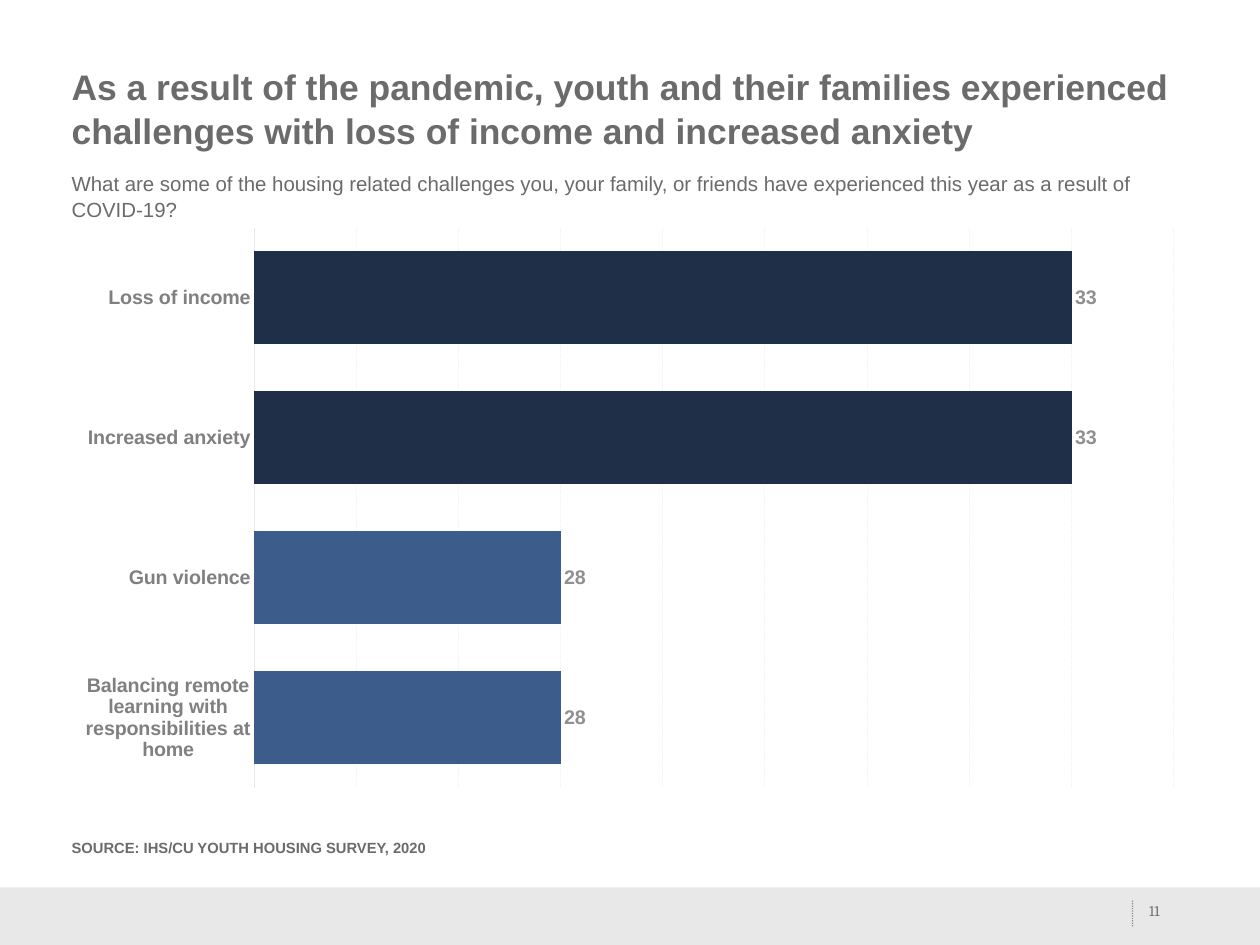
from dataclasses import dataclass

from lxml import etree
from pptx import Presentation
from pptx import util as u
from pptx.chart import data as chart_data
from pptx.dml.color import RGBColor
from pptx.enum import chart as charts, dml, shapes, text
from pptx.oxml import ns

GREY = "6B6B6B"


@dataclass
class TextBlock:
    wording: str
    left: float
    top: float
    width: float
    height: float
    size: float
    font: str = "Arial"
    bold: bool = False
    side_inset: float = 0.1
    top_inset: float = 0.05
    bottom_inset: float = 0.05
    spacing: float = 1.0
    align: text.PP_ALIGN = text.PP_ALIGN.LEFT
    anchor: text.MSO_ANCHOR = text.MSO_ANCHOR.TOP


TEXT_BLOCKS = [
    TextBlock("As a result of the pandemic, youth and their families experienced "
              "challenges with loss of income and increased anxiety",
              0.71, 0.65, 12.8, 0.74, 28.8, bold=True, top_inset=0.07, spacing=1.03),
    TextBlock("What are some of the housing related challenges you, your family, "
              "or friends have experienced this year as a result of COVID-19?",
              0.71, 1.87, 12.8, 0.58, 16.6, spacing=1.06),
    TextBlock("SOURCE: IHS/CU YOUTH HOUSING SURVEY, 2020",
              0.71, 9.42, 13.51, 0.6, 12, bold=True),
    TextBlock("11", 12.85, 9.81, 0.36, 0.57, 12, font="Cambria", side_inset=0,
              top_inset=0, bottom_inset=0, spacing=1.5,
              align=text.PP_ALIGN.CENTER, anchor=text.MSO_ANCHOR.BOTTOM),
]

CHALLENGES = {
    "Loss of income": 33,
    "Increased anxiety": 33,
    "Gun violence": 28,
    "Balancing remote\nlearning with\nresponsibilities at home": 28,
}
TOP_VALUE = max(CHALLENGES.values())


def rgb(value: str) -> RGBColor:
    return RGBColor.from_string(value)


def style_font(font, size: float, color: str, bold: bool = False, name: str = "Arial") -> None:
    font.size = u.Pt(size)
    font.bold = bold
    font.name = name
    font.color.rgb = rgb(color)


def style_line(line, color: str, width: float) -> None:
    line.color.rgb = rgb(color)
    line.width = u.Pt(width)


def add_text(slide, block: TextBlock) -> None:
    frame = slide.shapes.add_textbox(
        u.Inches(block.left), u.Inches(block.top),
        u.Inches(block.width), u.Inches(block.height)).text_frame
    frame.word_wrap = True
    frame.vertical_anchor = block.anchor
    frame.margin_left = frame.margin_right = u.Inches(block.side_inset)
    frame.margin_top = u.Inches(block.top_inset)
    frame.margin_bottom = u.Inches(block.bottom_inset)
    frame.text = block.wording
    paragraph = frame.paragraphs[0]
    paragraph.alignment = block.align
    paragraph.line_spacing = block.spacing
    style_font(paragraph.runs[0].font, block.size, GREY, block.bold, block.font)


def add_footer(slide) -> None:
    band = slide.shapes.add_shape(
        shapes.MSO_SHAPE.RECTANGLE, 0, u.Inches(10.02), u.Inches(14.22), u.Inches(0.65))
    band.shadow.inherit = False
    band.fill.solid()
    band.fill.fore_color.rgb = rgb("E8E8E8")
    band.line.fill.background()

    divider = slide.shapes.add_connector(
        shapes.MSO_CONNECTOR.STRAIGHT, u.Inches(12.78), u.Inches(10.17),
        u.Inches(12.78), u.Inches(10.46))
    style_line(divider.line, GREY, 1)
    divider.line.dash_style = dml.MSO_LINE.ROUND_DOT
    properties = divider._element.spPr
    color = properties.find(".//" + ns.qn("a:srgbClr"))
    etree.SubElement(color, ns.qn("a:alpha"), val="75000")
    etree.SubElement(properties, ns.qn("a:effectLst"))


def fix_plot_area(chart, **fractions: float) -> None:
    plot_area = chart._chartSpace.chart.plotArea
    layout = plot_area.find(ns.qn("c:layout"))
    if layout is None:
        layout = etree.Element(ns.qn("c:layout"))
        plot_area.insert(0, layout)
    manual = etree.SubElement(layout, ns.qn("c:manualLayout"))
    settings = {"layoutTarget": "inner", "xMode": "edge", "yMode": "edge", **fractions}
    for tag, value in settings.items():
        etree.SubElement(manual, ns.qn(f"c:{tag}"), val=str(value))


def add_challenge_chart(slide) -> None:
    survey = chart_data.CategoryChartData()
    survey.categories = list(CHALLENGES)
    survey.add_series("Series 1", list(CHALLENGES.values()))
    chart = slide.shapes.add_chart(
        charts.XL_CHART_TYPE.BAR_CLUSTERED, u.Inches(0.71), u.Inches(2.44),
        u.Inches(12.8), u.Inches(6.6), survey).chart
    chart.has_legend = False
    chart.has_title = False
    style_font(chart.font, 10, GREY)
    fix_plot_area(chart, x=0.1685, y=0.02, w=0.811, h=0.958)

    challenge_axis = chart.category_axis
    challenge_axis.reverse_order = True
    challenge_axis.major_tick_mark = charts.XL_TICK_MARK.NONE
    style_font(challenge_axis.tick_labels.font, 16, "808080", bold=True)
    style_line(challenge_axis.format.line, "E9E9E9", 0.75)

    count_axis = chart.value_axis
    count_axis.minimum_scale = 25
    count_axis.maximum_scale = 34
    count_axis.major_unit = 1
    count_axis.visible = False
    count_axis.has_major_gridlines = True
    gridline = count_axis.major_gridlines.format.line
    style_line(gridline, "F2F2F2", 0.75)
    gridline.dash_style = dml.MSO_LINE.ROUND_DOT

    plot = chart.plots[0]
    plot.gap_width = 50
    plot.vary_by_categories = False
    responses = plot.series[0]
    responses.format.fill.solid()
    responses.format.fill.fore_color.rgb = rgb("1F2F47")
    for index, count in enumerate(CHALLENGES.values()):
        if count < TOP_VALUE:
            bar_fill = responses.points[index].format.fill
            bar_fill.solid()
            bar_fill.fore_color.rgb = rgb("3C5C8C")

    labels = responses.data_labels
    labels.show_value = True
    labels.position = charts.XL_LABEL_POSITION.OUTSIDE_END
    style_font(labels.font, 16, "909090", bold=True)


def main() -> None:
    deck = Presentation()
    deck.slide_width = u.Inches(14.22)
    deck.slide_height = u.Inches(10.67)
    slide = deck.slides.add_slide(deck.slide_layouts[6])
    add_footer(slide)
    for block in TEXT_BLOCKS:
        add_text(slide, block)
    add_challenge_chart(slide)
    deck.save("out.pptx")


if __name__ == "__main__":
    main()
